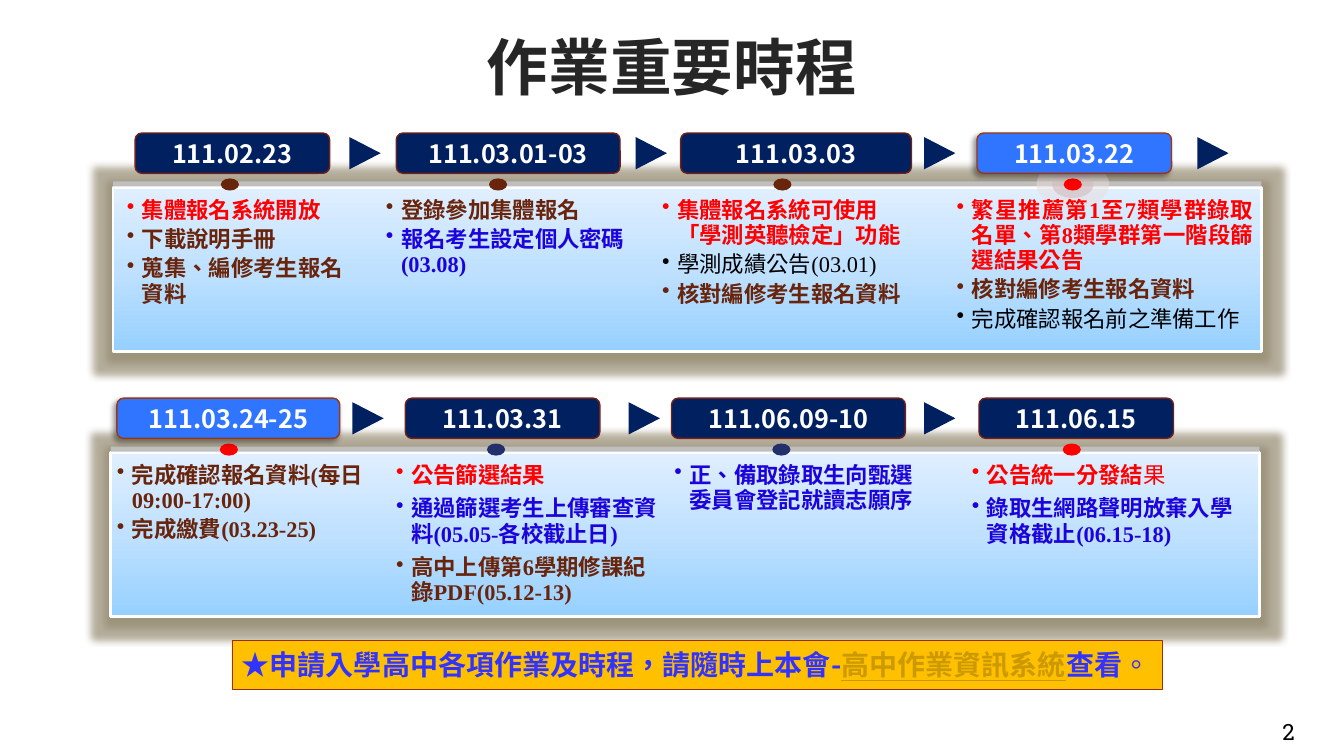
import pptx
import pptx.dml.color
import pptx.enum.shapes
import pptx.enum.text
import pptx.oxml
import pptx.oxml.ns
import pptx.util

SHAPES = pptx.enum.shapes.MSO_SHAPE
ALIGN = pptx.enum.text.PP_ALIGN
ANCHOR = pptx.enum.text.MSO_ANCHOR
NAMESPACE = pptx.oxml.ns.nsdecls("a")
SANS, SERIF = "Noto Sans CJK SC", "Times New Roman"
NAVY, BRIGHT = "002060", "3075FF"

# Content
TITLE = "作業重要時程"
STYLES = {  # name: colour, bold
    "red": ("FF0000", True), "thin red": ("FF0000", False),
    "brown": ("69240C", True), "blue": ("1D03DB", True),
    "black": ("000000", False),
}
# Stage: date, (label left, width), dot centre and colour,
#        (text left, width), space before, paragraphs of runs
ROWS = [
    {"top": 1.32, "panel": 1.12, "arrows": [3.62, 6.46, 9.32, 12.03], "highlight": 3, "stages": [
        ("111.02.23", (1.34, 1.93), 2.28, "69240C", (1.16, 2.47), 3, [
            [("集體報名系統開放", "red")],
            [("下載說明手冊", "brown")],
            [("蒐集、編修考生報名資料", "brown")]]),
        ("111.03.01-03", (3.93, 2.22), 4.94, "69240C", (3.73, 2.73), 3, [
            [("登錄參加集體報名", "brown")],
            [("報名考生設定個人密碼(03.08)", "blue")]]),
        ("111.03.03", (6.75, 2.29), 7.76, "69240C", (6.47, 2.77), 3, [
            [("集體報名系統可使用「學測英聽檢定」功能", "red")],
            [("學測成績公告(03.01)", "black")],
            [("核對編修考生報名資料", "brown")]]),
        ("111.03.22", (9.69, 1.93), 10.64, "FF0000", (9.39, 3.14), 3, [
            [("繁星推薦第1至7類學群錄取名單、第8類學群第一階段篩選結果公告", "red")],
            [("核對編修考生報名資料", "brown")],
            [("完成確認報名前之準備工作", "black")]]),
    ]},
    {"top": 3.95, "panel": 1.1, "arrows": [3.65, 6.39, 9.32], "highlight": 0, "stages": [
        ("111.03.24-25", (1.16, 2.21), 2.27, "FF0000", (1.06, 2.69), 3, [
            [("完成確認報名資料(每日09:00-17:00)", "brown")],
            [("完成繳費(03.23-25)", "brown")]]),
        ("111.03.31", (4.02, 1.93), 4.92, "21306A", (3.83, 2.8), 6, [
            [("公告篩選結果", "red")],
            [("通過篩選考生上傳審查資料(05.05-各校截止日)", "blue")],
            [("高中上傳第6學期修課紀錄PDF(05.12-13)", "brown")]]),
        ("111.06.09-10", (6.66, 2.32), 7.75, "21306A", (6.59, 2.77), 6, [
            [("正、備取錄取生向甄選委員會登記就讀志願序", "blue")]]),
        ("111.06.15", (9.71, 1.93), 10.63, "FF0000", (9.54, 2.95), 6, [
            [("公告統一分發結", "red"), ("果", "thin red")],
            [("錄取生網路聲明放棄入學資格截止(06.15-18)", "blue")]]),
    ]},
]
HALOS = [(0.72, 0.48, "E8DEDE", 50), (0.41, 0.27, "D0BCBC", 60)]
BANNER = [  # text, colour, bold, underline
    ("★申請入學高中各項作業及時程，請隨時上本會-", "3333FF", True, False),
    ("高中作業資訊系統", "CC9900", True, True),
    ("查看", "3333FF", True, False),
    ("。", "3333FF", False, False),
]
PANEL_WIDTH, PANEL_HEIGHT, LABEL_HEIGHT = 11.39, 1.63, 0.4
BAR_DROP, DOT_DROP, PANEL_DROP, TEXT_DROP = 0.48, 0.51, 0.54, 0.59

presentation = pptx.Presentation()
presentation.slide_width = pptx.util.Inches(13.33)
presentation.slide_height = pptx.util.Inches(7.5)
slide = presentation.slides.add_slide(presentation.slide_layouts[5])


def color(value):
    return pptx.dml.color.RGBColor.from_string(value)


def inches(*lengths):
    return [pptx.util.Inches(length) for length in lengths]


def add_shape(kind, left, top, width, height, fill, line=None, line_width=1):
    shape = slide.shapes.add_shape(kind, *inches(left, top, width, height))
    shape.shadow.inherit = False
    shape.fill.solid()
    shape.fill.fore_color.rgb = color(fill)
    if line:
        shape.line.color.rgb = color(line)
        shape.line.width = pptx.util.Pt(line_width)
    else:
        shape.line.fill.background()
    return shape


def add_centered(kind, x, y, width, height, fill):
    return add_shape(kind, x - width / 2, y - height / 2, width, height, fill)


def add_text(left, top, width, height):
    frame = slide.shapes.add_textbox(*inches(left, top, width, height)).text_frame
    frame.word_wrap = True
    return frame


def format_run(run, size, fill, bold, font):
    run.font.size = pptx.util.Pt(size)
    run.font.bold = bold
    run.font.name = font
    run.font.color.rgb = color(fill)
    properties = run._r.get_or_add_rPr()
    properties.set("lang", "zh-TW")
    properties.find(pptx.oxml.ns.qn("a:latin")).addnext(
        pptx.oxml.parse_xml(f'<a:ea {NAMESPACE} typeface="{SANS}"/>'))


def add_effect(shape, xml):
    effects = shape._element.spPr.find(pptx.oxml.ns.qn("a:effectLst"))
    effects.append(pptx.oxml.parse_xml(xml))


def add_panel(left, top):
    panel = add_shape(SHAPES.RECTANGLE, left, top, PANEL_WIDTH, PANEL_HEIGHT, "BFE1FF", "FFFFFF", 2)
    panel.fill.gradient()
    panel.fill.gradient_angle = 90
    stops = panel.fill.gradient_stops
    for stop, position, fill in zip(stops, (0, 1), ("96D0FF", "E0EFFF")):
        stop.position = position
        stop.color.rgb = color(fill)
    stop_list = panel._element.spPr.find(".//" + pptx.oxml.ns.qn("a:gsLst"))
    stop_list.insert(1, pptx.oxml.parse_xml(
        f'<a:gs {NAMESPACE} pos="50000"><a:srgbClr val="BFE1FF"/></a:gs>'))
    add_effect(panel, f'<a:glow {NAMESPACE} rad="127000"><a:srgbClr val="948A70">'
                      '<a:alpha val="70000"/></a:srgbClr></a:glow>')


def add_label(date, left, top, width, highlighted):
    fill, line = (BRIGHT, "9C3511") if highlighted else (NAVY, "732117")
    label = add_shape(SHAPES.ROUNDED_RECTANGLE, left, top, width, LABEL_HEIGHT, fill, line)
    if highlighted:
        add_effect(label, f'<a:outerShdw {NAMESPACE} blurRad="50800" dist="38100" dir="8100000">'
                          '<a:srgbClr val="000000"><a:alpha val="40000"/></a:srgbClr></a:outerShdw>')
    frame = label.text_frame
    frame.text = date
    frame.vertical_anchor = ANCHOR.MIDDLE
    frame.paragraphs[0].alignment = ALIGN.CENTER
    format_run(frame.paragraphs[0].runs[0], 18, "FFFFFF", True, SANS)


def add_bullets(left, top, width, space_before, items, justify_first):
    frame = add_text(left, top, width, PANEL_HEIGHT - 0.1)
    for index, item in enumerate(items):
        paragraph = frame.paragraphs[0] if index == 0 else frame.add_paragraph()
        properties = paragraph._p.get_or_add_pPr()
        properties.set("marL", str(pptx.util.Inches(0.15)))
        properties.set("indent", str(pptx.util.Inches(-0.15)))
        properties.append(pptx.oxml.parse_xml(f'<a:buChar {NAMESPACE} char="•"/>'))
        paragraph.line_spacing = pptx.util.Pt(18)
        if index:
            paragraph.space_before = pptx.util.Pt(space_before)
        elif justify_first:
            paragraph.alignment = ALIGN.JUSTIFY
        for text, style in item:
            run = paragraph.add_run()
            run.text = text
            format_run(run, 16, *STYLES[style], SERIF)


# Title
title = slide.shapes.title
title.left, title.top, title.width, title.height = inches(2.12, 0.3, 9.09, 0.71)
title.text_frame.text = TITLE
title.text_frame.auto_size = pptx.enum.text.MSO_AUTO_SIZE.NONE
title.text_frame.vertical_anchor = ANCHOR.MIDDLE
title.text_frame.paragraphs[0].alignment = ALIGN.CENTER
format_run(title.text_frame.paragraphs[0].runs[0], 44, "262626", True, SANS)

# Two timeline rows
for row in ROWS:
    top = row["top"]
    add_panel(row["panel"], top + PANEL_DROP)
    add_shape(SHAPES.RECTANGLE, row["panel"], top + BAR_DROP, PANEL_WIDTH, 0.05, "BFBFBF")
    for index, (date, label, dot, dot_fill, text, space, items) in enumerate(row["stages"]):
        highlighted = index == row["highlight"]
        first_row = row is ROWS[0]
        if highlighted and first_row:
            for width, height, fill, opacity in HALOS:
                halo = add_centered(SHAPES.OVAL, dot, top + DOT_DROP, width, height, fill)
                halo_color = halo._element.spPr.find(".//" + pptx.oxml.ns.qn("a:srgbClr"))
                halo_color.append(pptx.oxml.parse_xml(f'<a:alpha {NAMESPACE} val="{opacity * 1000}"/>'))
        add_centered(SHAPES.OVAL, dot, top + DOT_DROP, 0.18, 0.12, dot_fill)
        add_bullets(text[0], top + TEXT_DROP, text[1], space, items, highlighted and first_row)
        add_label(date, label[0], top, label[1], highlighted)
    for x in row["arrows"]:
        arrow = add_centered(SHAPES.ISOSCELES_TRIANGLE, x, top + LABEL_HEIGHT / 2, 0.32, 0.31, NAVY)
        arrow.rotation = 90

# Banner
banner = add_shape(SHAPES.RECTANGLE, 2.3, 6.35, 9.23, 0.49, "FFC000", "9B2D1F", 0.5)
frame = banner.text_frame
frame.margin_right = 0
frame.vertical_anchor = ANCHOR.MIDDLE
frame.paragraphs[0].alignment = ALIGN.LEFT
for text, fill, bold, underline in BANNER:
    run = frame.paragraphs[0].add_run()
    run.text = text
    format_run(run, 20, fill, bold, SANS)
    run.font.underline = underline

# Page number
frame = add_text(12.62, 7.08, 0.69, 0.37)
frame.text = "2"
format_run(frame.paragraphs[0].runs[0], 16, "000000", False, "Roboto Slab")

presentation.save("out.pptx")
